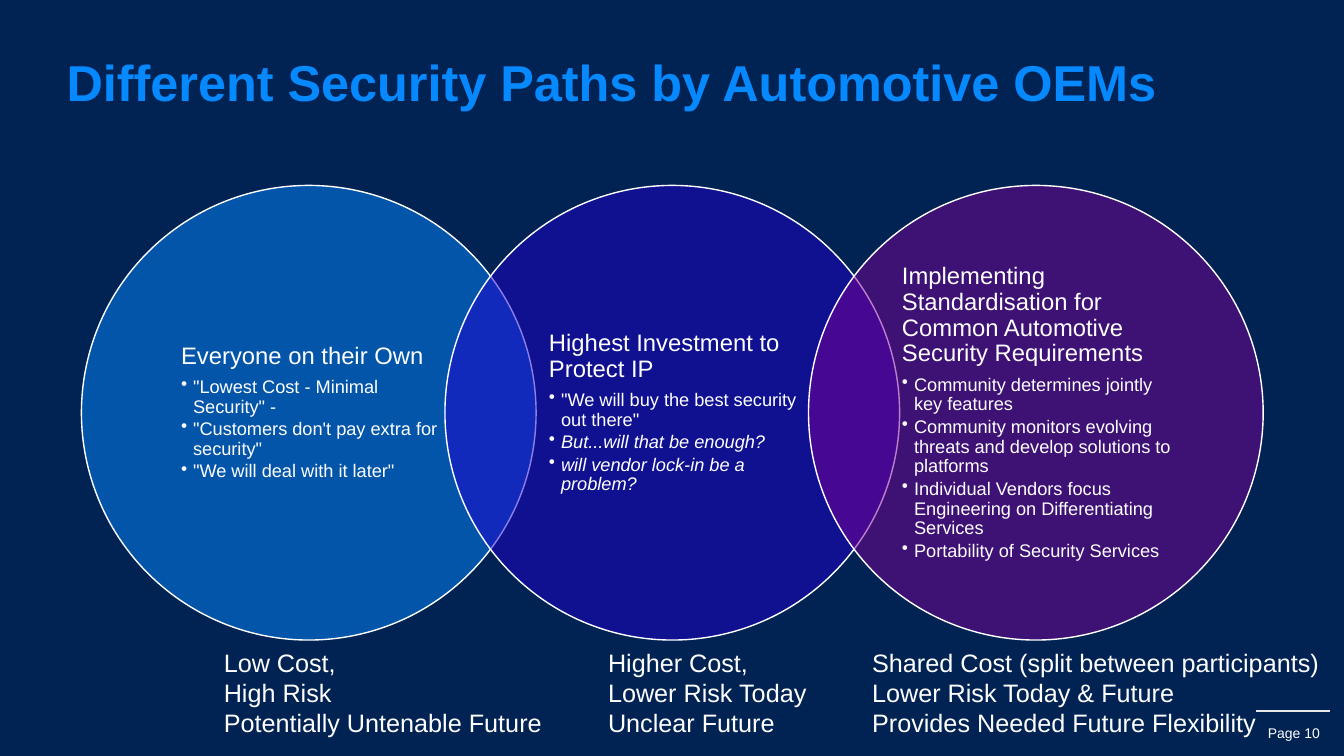
from dataclasses import dataclass

from lxml import etree
from pptx import Presentation
from pptx import util as u
from pptx.dml import color
from pptx.enum import shapes, text
from pptx.oxml import ns


@dataclass(frozen=True)
class Theme:
    font: str = "Arial"
    back: str = "002353"
    title: str = "0688FF"
    ink: str = "FFFFFF"
    rule: str = "E8E7E7"
    title_size: int = 36
    caption_size: int = 18
    heading_size: int = 17
    bullet_size: int = 13
    page_size: int = 10


def rgb(value):
    return color.RGBColor.from_string(value)


def sub(parent, tag, **attrs):
    return etree.SubElement(parent, ns.qn(tag), attrs)


class Deck:
    def __init__(self, theme):
        self.theme = theme
        self.prs = Presentation()
        self.prs.slide_width = u.Inches(13.33)
        self.prs.slide_height = u.Inches(7.5)
        self.s = self.prs.slides.add_slide(self.prs.slide_layouts[6])
        self.s.background.fill.solid()
        self.s.background.fill.fore_color.rgb = rgb(theme.back)

    def x(self, share):
        return int(self.prs.slide_width * share / 100)

    def y(self, share):
        return int(self.prs.slide_height * share / 100)

    def box(self, left, top, width, height):
        return self.x(left), self.y(top), self.x(width), self.y(height)

    def frame(self, area, wrap=True, inset=(0, 0)):
        tf = self.s.shapes.add_textbox(*self.box(*area)).text_frame
        tf.auto_size = text.MSO_AUTO_SIZE.NONE
        tf.word_wrap = wrap
        tf.margin_left = tf.margin_right = u.Inches(inset[0])
        tf.margin_top = tf.margin_bottom = u.Inches(inset[1])
        return tf

    def para(self, tf, first=False):
        return tf.paragraphs[0] if first else tf.add_paragraph()

    def run(self, p, words, size, ink=None, bold=False, italic=False):
        r = p.add_run()
        r.text = words
        r.font.name = self.theme.font
        r.font.size = u.Pt(size)
        r.font.bold = bold
        r.font.italic = italic
        r.font.color.rgb = rgb(ink or self.theme.ink)
        return r

    def title(self, area, words):
        t = self.theme
        p = self.para(self.frame(area), True)
        p.line_spacing = 0.9
        r = self.run(p, words, t.title_size, t.title, bold=True)
        ln = etree.Element(ns.qn("a:ln"), w=str(u.Pt(0.75)))
        sub(sub(ln, "a:solidFill"), "a:srgbClr", val=t.title)
        r.font._element.insert(0, ln)

    def circle(self, area, fill):
        sp = self.s.shapes.add_shape(shapes.MSO_SHAPE.OVAL, *self.box(*area))
        sp.shadow.inherit = False
        sp.fill.solid()
        sp.fill.fore_color.rgb = rgb(fill)
        tint = sp._element.spPr.find(".//" + ns.qn("a:srgbClr"))
        sub(tint, "a:alpha", val="50000")
        sp.line.color.rgb = rgb(self.theme.ink)
        sp.line.width = u.Pt(1)

    def path_text(self, area, heading, bullets, italic_from):
        tf = self.frame(area, inset=(0.25, 0.02))
        tf.vertical_anchor = text.MSO_ANCHOR.MIDDLE
        tf._txBody.bodyPr.set("anchorCtr", "1")
        p = self.para(tf, True)
        p.line_spacing = 0.9
        p.space_after = u.Pt(6)
        self.run(p, heading, self.theme.heading_size)
        for i, words in enumerate(bullets):
            self.bullet(tf, words, i >= italic_from)

    def bullet(self, tf, words, italic):
        p = self.para(tf)
        p.level = 1
        pPr = p._p.get_or_add_pPr()
        pPr.set("marL", str(u.Inches(0.12)))
        pPr.set("indent", str(-u.Inches(0.12)))
        sub(pPr, "a:buChar", char="•")
        p.line_spacing = 0.9
        p.space_after = u.Pt(2)
        self.run(p, words, self.theme.bullet_size, italic=italic)

    def caption(self, area, lines):
        tf = self.frame(area, wrap=False)
        for i, words in enumerate(lines):
            self.run(self.para(tf, i == 0), words, self.theme.caption_size)

    def rule(self, left, right, top):
        c = self.s.shapes.add_connector(
            shapes.MSO_CONNECTOR.STRAIGHT,
            self.x(left), self.y(top), self.x(right), self.y(top))
        c.line.color.rgb = rgb(self.theme.rule)
        c.line.width = u.Pt(1.5)
        sub(c._element.spPr, "a:effectLst")

    def page(self, area, words):
        p = self.para(self.frame(area), True)
        p.alignment = text.PP_ALIGN.RIGHT
        self.run(p, words, self.theme.page_size)


PATHS = [
    ("0688FF", "Everyone on their Own",
     ['"Lowest Cost - Minimal Security" -',
      '"Customers don\'t pay extra for security"',
      '"We will deal with it later"'], 3,
     16.65, 7.5,
     ["Low Cost,", "High Risk", "Potentially Untenable Future"]),
    ("1F00CE", "Highest Investment to Protect IP",
     ['"We will buy the best security out there"',
      "But...will that be enough?",
      "will vendor lock-in be a problem?"], 1,
     45.24, 7.5,
     ["Higher Cost,", "Lower Risk Today", "Unclear Future"]),
    ("7D0097",
     "Implementing Standardisation for Common Automotive Security Requirements",
     ["Community determines jointly key features",
      "Community monitors evolving threats and develop solutions to platforms",
      "Individual Vendors focus Engineering on Differentiating Services",
      "Portability of Security Services"], 4,
     64.89, 35.63,
     ["Shared Cost (split between participants)",
      "Lower Risk Today & Future",
      "Provides Needed Future Flexibility"]),
]
PITCH = 27.05


def main():
    deck = Deck(Theme())
    deck.rule(93.47, 98.95, 94)
    deck.page((91.67, 95.87, 6.53, 2.67), "Page 10")
    for i, (fill, heading, bullets, italic_from, *_) in enumerate(PATHS):
        shift = i * PITCH
        deck.circle((6.06 + shift, 24.53, 33.83, 60.13), fill)
        deck.path_text((11.03 + shift, 33.33, 23.93, 42.53),
                       heading, bullets, italic_from)
    deck.title((4.95, 7.73, 88, 6),
               "Different Security Paths by Automotive OEMs")
    for *_, left, width, lines in PATHS:
        deck.caption((left, 85.6, width, 13.33), lines)
    deck.prs.save("out.pptx")


if __name__ == "__main__":
    main()
